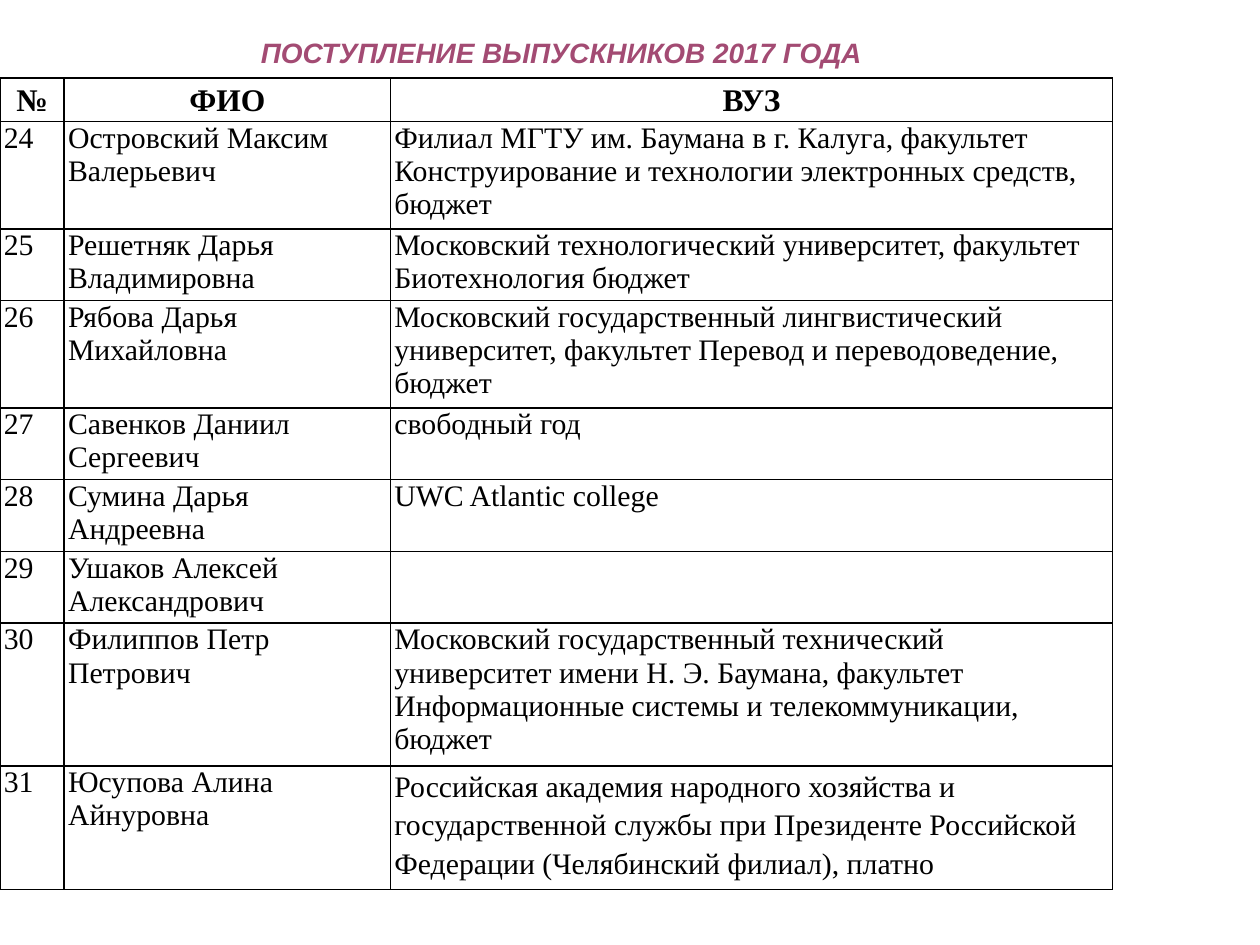
from pptx import Presentation
from pptx.dml.color import RGBColor
from pptx.enum.text import MSO_ANCHOR as Anchor, MSO_AUTO_SIZE as AutoSize, PP_ALIGN as Align
from pptx.oxml import parse_xml
from pptx.oxml.ns import nsdecls
from pptx.util import Inches, Pt

HEADINGS = ("№", "ФИО", "ВУЗ")
GRADUATES = [
    ("Островский Максим Валерьевич",
     "Филиал МГТУ им. Баумана в г. Калуга, факультет Конструирование и технологии "
     "электронных средств, бюджет"),
    ("Решетняк Дарья Владимировна",
     "Московский технологический университет, факультет Биотехнология бюджет"),
    ("Рябова Дарья Михайловна",
     "Московский государственный лингвистический университет, факультет Перевод и "
     "переводоведение, бюджет"),
    ("Савенков Даниил Сергеевич", "свободный год"),
    ("Сумина Дарья Андреевна", "UWC Atlantic college"),
    ("Ушаков Алексей Александрович", ""),
    ("Филиппов Петр Петрович",
     "Московский государственный технический университет имени Н. Э. Баумана, факультет "
     "Информационные системы и телекоммуникации, бюджет"),
    ("Юсупова Алина Айнуровна",
     "Российская академия народного хозяйства и государственной службы при Президенте "
     "Российской Федерации (Челябинский филиал), платно"),
]
FIRST_NUMBER = 24
SHORT, TALL = 5.7, 8.5
ROW_HEIGHTS = [3.4, TALL, SHORT, TALL, SHORT, SHORT, SHORT, TALL, 9.8]
COLUMN_WIDTHS = [5.1, 25.9, 57.3]


def color(value):
    return RGBColor.from_string(value)


def apply(target, values):
    for name, value in values.items():
        setattr(target, name, value)


def line_xml(tag, width, value):
    return parse_xml(
        f'<a:{tag} {nsdecls("a")} w="{int(Pt(width))}"><a:solidFill>'
        f'<a:srgbClr val="{value}"/></a:solidFill></a:{tag}>')


class Deck:
    GRID_COLUMNS, GRID_ROWS = 100, 75
    TITLE = dict(name="Arial", size=Pt(16), bold=True, italic=True)
    HEADING = dict(name="Times New Roman", size=Pt(18), bold=True)
    BODY = dict(name="Times New Roman", size=Pt(17), bold=False)
    CELL = dict(margin_left=Inches(0.03), margin_right=Inches(0.03),
                margin_top=0, margin_bottom=0)
    ACCENT, OUTLINE, INK = "A34B73", "5E1A50", "000000"

    def __init__(self, width, height):
        self.deck = Presentation()
        apply(self.deck, dict(slide_width=Inches(width), slide_height=Inches(height)))
        self.slide = self.deck.slides.add_slide(self.deck.slide_layouts[5])

    def across(self, columns):
        return int(self.deck.slide_width * columns / self.GRID_COLUMNS)

    def down(self, rows):
        return int(self.deck.slide_height * rows / self.GRID_ROWS)

    def box(self, left, top, width, height):
        return dict(left=self.across(left), top=self.down(top),
                    width=self.across(width), height=self.down(height))

    def title(self, text, *place):
        heading = self.slide.shapes.title
        apply(heading, self.box(*place))
        apply(heading.text_frame, dict(text=text, word_wrap=True, vertical_anchor=Anchor.TOP,
                                       auto_size=AutoSize.SHAPE_TO_FIT_TEXT))
        paragraph = heading.text_frame.paragraphs[0]
        paragraph.alignment = Align.CENTER
        font = paragraph.runs[0].font
        apply(font, self.TITLE)
        font.color.rgb = color(self.ACCENT)
        paragraph.runs[0].font._element.insert(0, line_xml("ln", 0.04, self.OUTLINE))

    def cell(self, cell, text, style, **layout):
        apply(cell, self.CELL)
        cell.text = text
        paragraph = cell.text_frame.paragraphs[0]
        apply(paragraph, layout)
        apply(paragraph.font, style)
        for run in paragraph.runs:
            apply(run.font, style)
            run.font.color.rgb = color(self.INK)
        properties = cell._tc.get_or_add_tcPr()
        for side in ("lnL", "lnR", "lnT", "lnB"):
            properties.append(line_xml(side, 1, self.INK))
        cell.fill.background()

    def table(self, left, top, widths, heights, headings, records):
        place = self.box(left, top, sum(widths), sum(heights))
        table = self.slide.shapes.add_table(len(heights), len(widths), **place).table
        apply(table, dict(first_row=False, horz_banding=False))
        for column, width in zip(table.columns, widths):
            column.width = self.across(width)
        for row, height in zip(table.rows, heights):
            row.height = self.down(height)
        for cell, text in zip(table.rows[0].cells, headings):
            self.cell(cell, text, self.HEADING, alignment=Align.CENTER, line_spacing=1.15)
        for index, record in enumerate(records, 1):
            for cell, text in zip(table.rows[index].cells, record):
                self.cell(cell, text, self.BODY)
        return table


def main():
    deck = Deck(10, 7.5)
    deck.title("ПОСТУПЛЕНИЕ ВЫПУСКНИКОВ 2017 ГОДА", 3.9, 2.3, 81.3, 3.7)
    records = [(str(number), *graduate)
               for number, graduate in enumerate(GRADUATES, FIRST_NUMBER)]
    admissions = deck.table(0, 6.2, COLUMN_WIDTHS, ROW_HEIGHTS, HEADINGS, records)
    last_university = admissions.cell(len(records), 2)
    last_university.text_frame.paragraphs[0].line_spacing = 1.15
    deck.deck.save("out.pptx")


if __name__ == "__main__":
    main()
